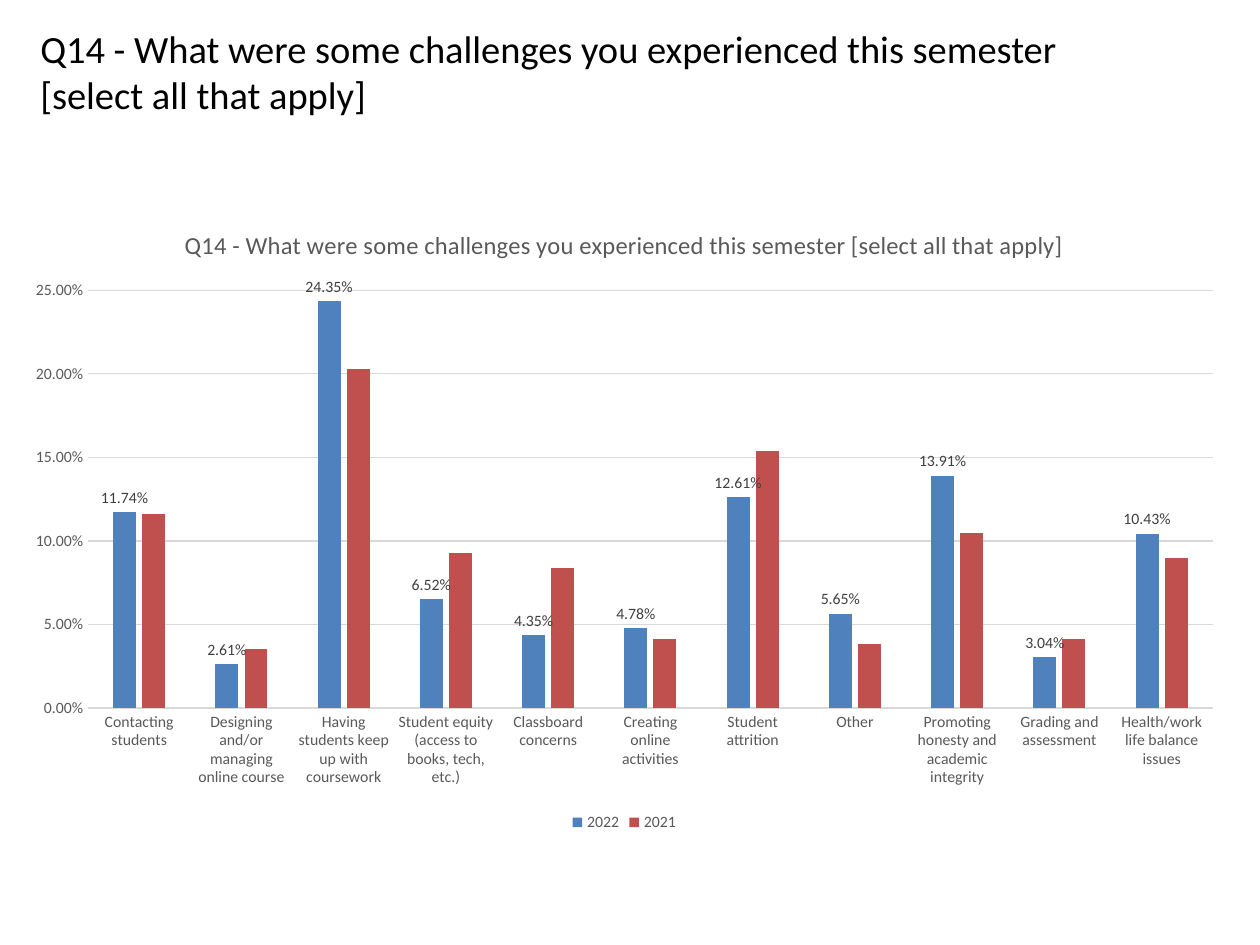
from dataclasses import dataclass

from pptx import Presentation
from pptx import util as u
from pptx.chart.data import CategoryChartData
from pptx.dml.color import RGBColor
from pptx.enum import chart as charts, text

EMU_PER_PX = 9144  # 100 px to the inch


@dataclass(frozen=True)
class Theme:
    font: str = "Calibri"
    black: str = "000000"
    muted: str = "595959"
    label: str = "404040"
    rule: str = "D9D9D9"
    series: tuple = ("4F81BD", "C0504D")
    heading_size: int = 22
    chart_title_size: int = 14
    chart_size: int = 10
    small_size: int = 9
    rule_width: float = 0.75


THEME = Theme()
QUESTION = ("Q14 - What were some challenges you experienced this semester "
            "[select all that apply]")
PERCENT = "0.00%"
YEARS = ("2022", "2021")
CHALLENGES = (
    ("Contacting students", 0.1174, 0.116),
    ("Designing and/or managing online course", 0.0261, 0.035),
    ("Having students keep up with coursework", 0.2435, 0.203),
    ("Student equity (access to books, tech, etc.)", 0.0652, 0.093),
    ("Classboard concerns", 0.0435, 0.084),
    ("Creating online activities", 0.0478, 0.041),
    ("Student attrition", 0.1261, 0.154),
    ("Other", 0.0565, 0.038),
    ("Promoting honesty and academic integrity", 0.1391, 0.105),
    ("Grading and assessment", 0.0304, 0.041),
    ("Health/work life balance issues", 0.1043, 0.09),
)


def px(length):
    return u.Emu(length * EMU_PER_PX)


def style_font(font, size, color):
    font.name = THEME.font
    font.size = u.Pt(size)
    font.bold = False
    font.color.rgb = RGBColor.from_string(color)


def style_rule(line):
    line.color.rgb = RGBColor.from_string(THEME.rule)
    line.width = u.Pt(THEME.rule_width)


def place_heading(slide, left, top, width, height):
    title = slide.shapes.title
    title.left, title.top, title.width, title.height = map(
        px, (left, top, width, height))
    frame = title.text_frame
    frame.word_wrap = True
    frame.auto_size = text.MSO_AUTO_SIZE.NONE
    frame.vertical_anchor = text.MSO_ANCHOR.TOP
    paragraph = frame.paragraphs[0]
    paragraph.alignment = text.PP_ALIGN.LEFT
    run = paragraph.add_run()
    run.text = QUESTION
    style_font(run.font, THEME.heading_size, THEME.black)


def style_axes(chart):
    for axis in (chart.category_axis, chart.value_axis):
        axis.major_tick_mark = charts.XL_TICK_MARK.NONE
        axis.minor_tick_mark = charts.XL_TICK_MARK.NONE
        style_font(axis.tick_labels.font, THEME.small_size, THEME.muted)
    style_rule(chart.category_axis.format.line)

    values = chart.value_axis
    values.minimum_scale, values.maximum_scale = 0, 0.25
    values.major_unit = 0.05
    values.has_major_gridlines = True
    style_rule(values.major_gridlines.format.line)
    values.format.line.fill.background()
    values.tick_labels.number_format = PERCENT
    values.tick_labels.number_format_is_linked = False


def style_columns(plot):
    plot.gap_width = 219
    plot.overlap = -27
    plot.vary_by_categories = False
    for series, color in zip(plot.series, THEME.series):
        series.invert_if_negative = False
        series.format.fill.solid()
        series.format.fill.fore_color.rgb = RGBColor.from_string(color)

    labels = plot.series[0].data_labels
    labels.show_value = True
    labels.number_format = PERCENT
    labels.number_format_is_linked = False
    labels.position = charts.XL_LABEL_POSITION.OUTSIDE_END
    style_font(labels.font, THEME.small_size, THEME.label)


def place_chart(slide, left, top, width, height):
    names, *columns = zip(*CHALLENGES)
    data = CategoryChartData(number_format=PERCENT)
    data.categories = names
    for year, values in zip(YEARS, columns):
        data.add_series(year, values)
    chart = slide.shapes.add_chart(
        charts.XL_CHART_TYPE.COLUMN_CLUSTERED,
        *map(px, (left, top, width, height)), data).chart
    style_font(chart.font, THEME.chart_size, THEME.black)

    chart.has_title = True
    run = chart.chart_title.text_frame.paragraphs[0].add_run()
    run.text = QUESTION
    style_font(run.font, THEME.chart_title_size, THEME.muted)
    chart.chart_title.include_in_layout = False

    chart.has_legend = True
    chart.legend.position = charts.XL_LEGEND_POSITION.BOTTOM
    chart.legend.include_in_layout = False
    style_font(chart.legend.font, THEME.small_size, THEME.muted)

    style_axes(chart)
    style_columns(chart.plots[0])


def main():
    presentation = Presentation()
    presentation.slide_width, presentation.slide_height = px(1000), px(750)
    title_only = presentation.slide_layouts.get_by_name("Title Only")
    slide = presentation.slides.add_slide(title_only)
    place_heading(slide, 22, 15, 900, 40)
    place_chart(slide, 9, 162, 973, 502)
    presentation.save("out.pptx")


if __name__ == "__main__":
    main()
